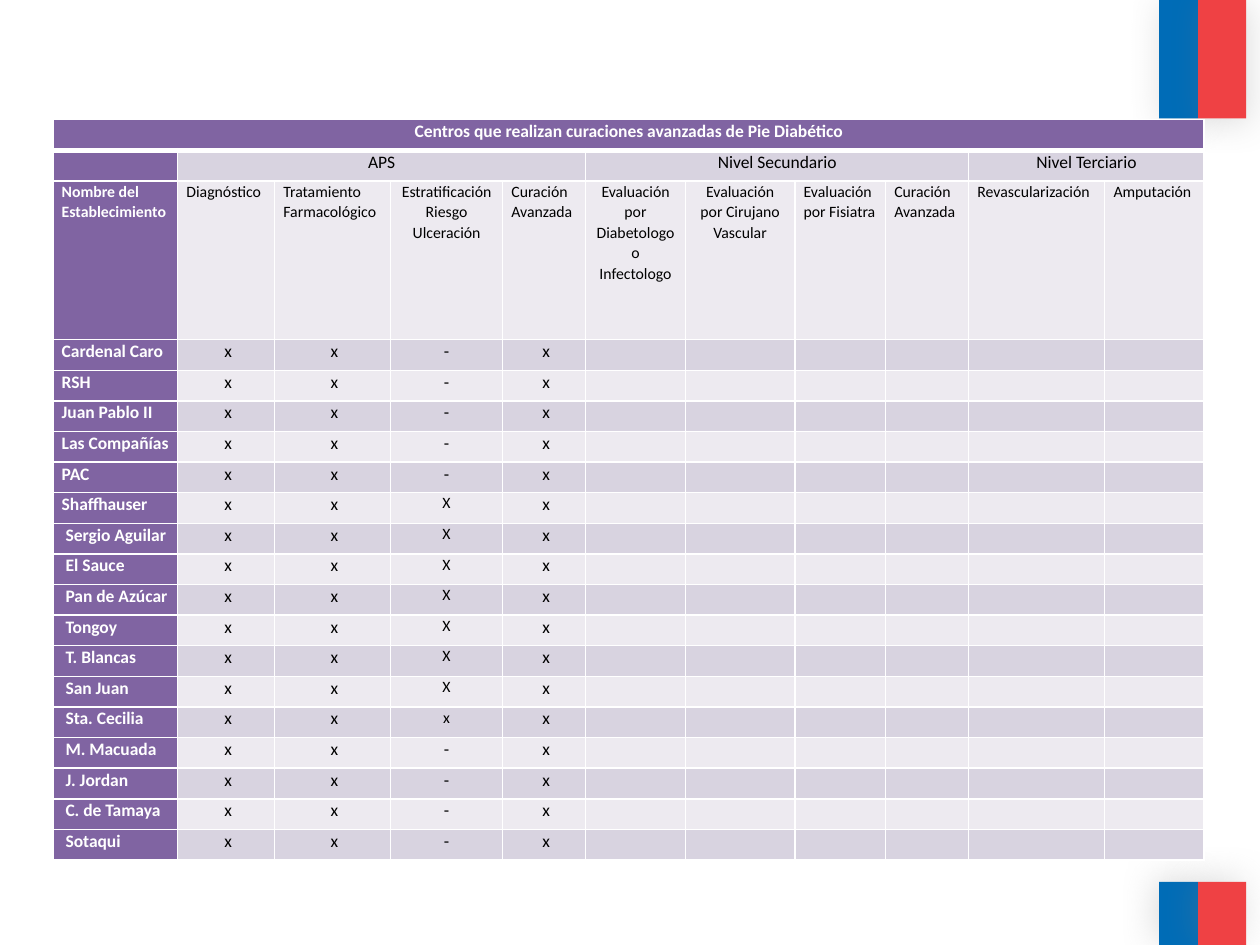
import lxml.etree
import pptx
import pptx.dml.color
import pptx.enum.shapes
import pptx.enum.text
import pptx.oxml.ns
import pptx.util

PURPLE, LILAC, PALE = "8064A2", "D8D3E0", "EDEAF0"
WHITE, BLACK = "FFFFFF", "000000"

TITLE = "Centros que realizan curaciones avanzadas de Pie Diabético"
LEVELS = [("APS", 1, 4), ("Nivel Secundario", 5, 8), ("Nivel Terciario", 9, 10)]
# heading, column width in inches, centred
COLUMNS = [
    ("Nombre del Establecimiento", 0.99, False),
    ("Diagnóstico", 0.77, False),
    ("Tratamiento Farmacológico", 0.92, False),
    ("Estratificación Riesgo Ulceración", 0.89, True),
    ("Curación Avanzada", 0.66, False),
    ("Evaluación por Diabetologo o Infectologo", 0.79, True),
    ("Evaluación por Cirujano Vascular", 0.87, True),
    ("Evaluación por Fisiatra", 0.72, False),
    ("Curación Avanzada", 0.66, False),
    ("Revascularización", 1.08, False),
    ("Amputación", 0.79, False),
]
# centre, mark for risk stratification (the other APS services are all "x")
CENTRES = [
    ("Cardenal Caro", "-"), ("RSH", "-"), ("Juan Pablo II", "-"),
    ("Las Compañías", "-"), ("PAC", "-"), ("Shaffhauser", "X"),
    ("Sergio Aguilar", "X"), ("El Sauce", "X"), ("Pan de Azúcar", "X"),
    ("Tongoy", "X"), ("T. Blancas", "X"), ("San Juan", "X"),
    ("Sta. Cecilia", "x"), ("M. Macuada", "-"), ("J. Jordan", "-"),
    ("C. de Tamaya", "-"), ("Sotaqui", "-"),
]
FIRST_INDENTED = 6
HEADER_ROWS = 3
TABLE_LEFT, TABLE_TOP, TABLE_HEIGHT, HEADING_HEIGHT = 0.42, 0.95, 5.88, 1.26
INSET, INDENTED_INSET = 0.07, 0.1

# top, height, shadow direction in degrees
FLAG_BANDS = [(0, 0.94, 45), (7, 0.5, 215)]
FLAG_STRIPES = [(9.2, 0.31, "006CB7"), (9.51, 0.38, "EF4144")]

inches = pptx.util.Inches


def rgb(colour):
    return pptx.dml.color.RGBColor.from_string(colour)


def child(parent, tag, **attributes):
    return lxml.etree.SubElement(parent, pptx.oxml.ns.qn(tag), attributes)


def add_stripe(slide, left, top, width, height, colour, direction):
    stripe = slide.shapes.add_shape(
        pptx.enum.shapes.MSO_SHAPE.RECTANGLE,
        inches(left), inches(top), inches(width), inches(height))
    stripe.fill.solid()
    stripe.fill.fore_color.rgb = rgb(colour)
    stripe.line.fill.background()
    stripe.shadow.inherit = False
    effects = stripe._element.spPr.find(pptx.oxml.ns.qn("a:effectLst"))
    shadow = child(effects, "a:outerShdw", blurRad=str(pptx.util.Pt(20)),
                   dist=str(pptx.util.Pt(3)), dir=str(direction * 60000),
                   rotWithShape="0")
    child(child(shadow, "a:srgbClr", val="808080"), "a:alpha", val="25000")


def style_cell(cell, fill, bottom=1, top=1):
    """Give the cell its white borders (widths in points), fill and insets."""
    properties = cell._tc.get_or_add_tcPr()
    for side, width in (("L", 1), ("R", 1), ("T", top), ("B", bottom)):
        border = child(properties, "a:ln" + side, w=str(pptx.util.Pt(width)))
        child(child(border, "a:solidFill"), "a:srgbClr", val=WHITE)
    cell.fill.solid()
    cell.fill.fore_color.rgb = rgb(fill)
    cell.margin_left = cell.margin_right = inches(INSET)
    cell.margin_top = cell.margin_bottom = 0
    cell.text_frame.paragraphs[0]._p.get_or_add_endParaRPr().set("sz", "1000")


def write(cell, text, size=10, colour=BLACK, bold=False, centred=True,
          inset=INSET):
    cell.margin_left = inches(inset)
    paragraph = cell.text_frame.paragraphs[0]
    paragraph.add_run().text = text
    align = pptx.enum.text.PP_ALIGN
    paragraph.alignment = align.CENTER if centred else align.LEFT
    paragraph.line_spacing = 1.07
    paragraph.font.name = "Calibri"
    paragraph.font.size = pptx.util.Pt(size)
    paragraph.font.bold = bold
    paragraph.font.color.rgb = rgb(colour)


def row_fill(row):
    return LILAC if row % 2 else PALE


def add_centres_table(slide):
    row_count = HEADER_ROWS + len(CENTRES)
    row_height = (TABLE_HEIGHT - HEADING_HEIGHT) / (row_count - 1)
    table = slide.shapes.add_table(
        row_count, len(COLUMNS), inches(TABLE_LEFT), inches(TABLE_TOP),
        inches(sum(width for _, width, _ in COLUMNS)),
        inches(TABLE_HEIGHT)).table
    table.first_row = table.horz_banding = False

    for column, (_, width, _) in enumerate(COLUMNS):
        table.columns[column].width = inches(width)
    for row in range(row_count):
        table.rows[row].height = inches(HEADING_HEIGHT if row == 2 else row_height)
        for column in range(len(COLUMNS)):
            fill = PURPLE if row == 0 or column == 0 else row_fill(row)
            style_cell(table.cell(row, column), fill,
                       bottom=3 if row == 0 else 1, top=3 if row == 1 else 1)

    table.cell(0, 0).merge(table.cell(0, len(COLUMNS) - 1))
    write(table.cell(0, 0), TITLE, colour=WHITE, bold=True)
    for level, first, last in LEVELS:
        table.cell(1, first).merge(table.cell(1, last))
        write(table.cell(1, first), level)
    for column, (heading, _, centred) in enumerate(COLUMNS):
        is_name = column == 0
        write(table.cell(2, column), heading, size=9, bold=is_name,
              colour=WHITE if is_name else BLACK, centred=centred)

    for index, (centre, risk) in enumerate(CENTRES):
        row = HEADER_ROWS + index
        write(table.cell(row, 0), centre, colour=WHITE, bold=True, centred=False,
              inset=INDENTED_INSET if index >= FIRST_INDENTED else INSET)
        for column in (1, 2, 4):
            write(table.cell(row, column), "x", inset=INDENTED_INSET)
        write(table.cell(row, 3), risk, size=10 if risk == "-" else 9)


def main():
    presentation = pptx.Presentation()
    presentation.slide_width = inches(10)
    presentation.slide_height = inches(7.5)
    slide = presentation.slides.add_slide(presentation.slide_layouts[6])
    for top, height, direction in FLAG_BANDS:
        for left, width, colour in FLAG_STRIPES:
            add_stripe(slide, left, top, width, height, colour, direction)
    add_centres_table(slide)
    presentation.save("out.pptx")


if __name__ == "__main__":
    main()
